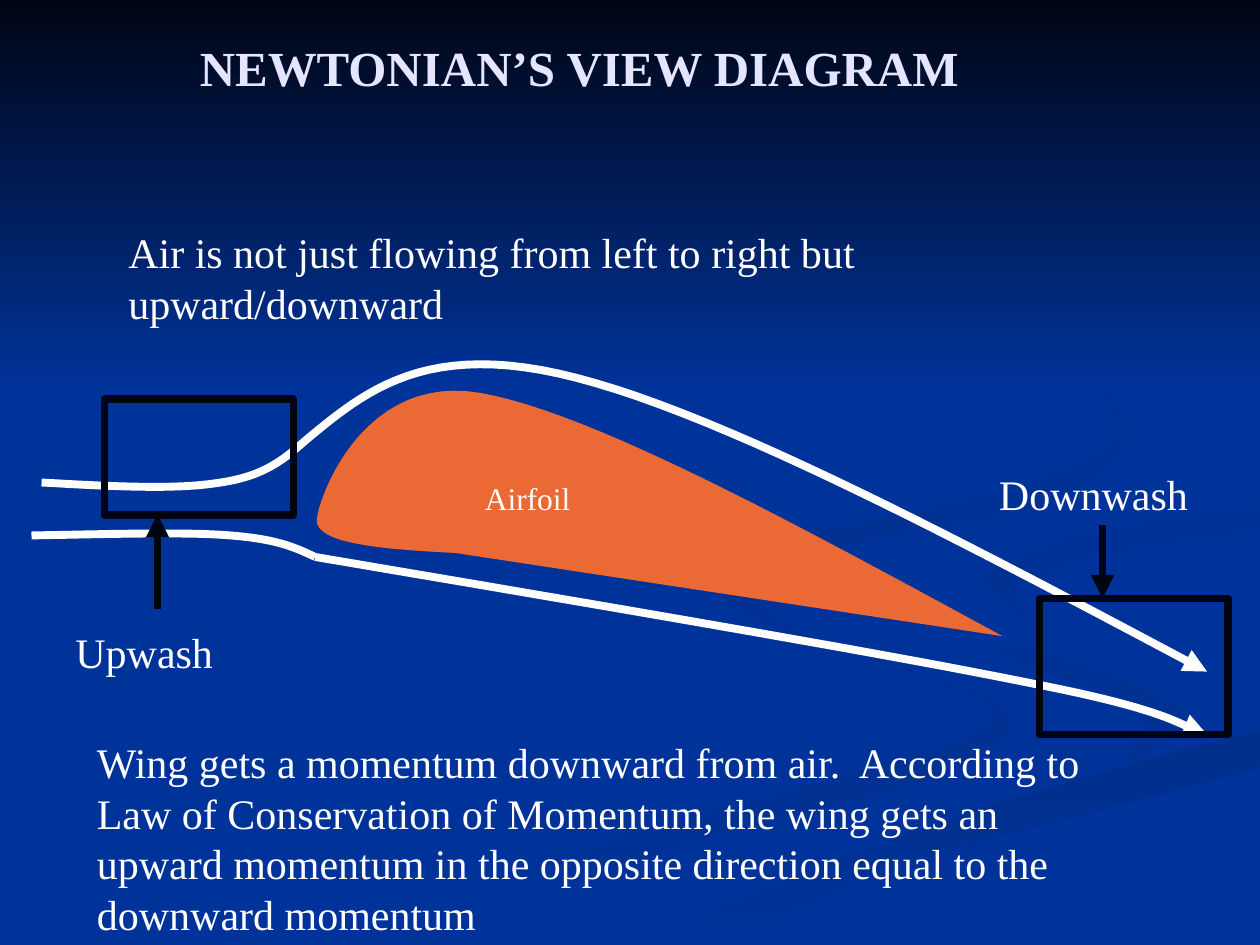
from dataclasses import dataclass
from math import cos, radians, sin
from typing import NamedTuple

from lxml.etree import SubElement
from pptx import Presentation
from pptx.dml.color import RGBColor
from pptx.enum.shapes import MSO_CONNECTOR, MSO_SHAPE
from pptx.enum.text import MSO_AUTO_SIZE, PP_ALIGN
from pptx.oxml.ns import qn
from pptx.util import Inches, Pt

Point = tuple[float, float]


@dataclass(frozen=True)
class Theme:
    font: str = "Times New Roman"
    background: str = "003399"
    dark: str = "000514"
    white: str = "FFFFFF"
    title: str = "E5E5FF"
    airfoil: str = "EB6935"
    title_size: int = 28
    body_size: int = 24
    label_size: int = 18
    line_width: float = 4.5


THEME = Theme()


class Swoosh(NamedTuple):
    start_color: str
    end_color: str
    angle: int  # clockwise degrees
    points: list[Point]


class Label(NamedTuple):
    text: str
    left: float
    top: float
    width: float
    height: float
    size: int = THEME.body_size
    color: str = THEME.white
    bold: bool = False
    align: PP_ALIGN = PP_ALIGN.LEFT
    left_margin: float = 0.1


class Stream(NamedTuple):
    controls: list[Point]  # start, then three points per cubic segment
    arrow: bool = False


# Each outline is smoothed through a few points
SWOOSHES = [
    Swoosh(THEME.background, "003193", 0, [
        (7.81, 5.53), (6.82, 5.19), (5.94, 4.85), (5.75, 4.59), (5.81, 4.84), (6.79, 5.19),
        (7.76, 5.53), (7.8, 5.79), (6.99, 6.09), (4.99, 6.61), (3, 7.49), (3.61, 7.49),
        (5.32, 6.74), (7.4, 6.18), (8, 5.81)]),
    Swoosh(THEME.background, "003193", 45, [
        (9.43, 5.7), (8.7, 5.3), (7.58, 4.98), (7.24, 4.64), (7.46, 5), (8.38, 5.36),
        (9.07, 5.62), (8.94, 6.05)]),
    Swoosh("002F8C", THEME.background, 90, [
        (5.03, 7.49), (5.71, 7.49), (7.22, 6.82), (9.98, 6.09), (9.98, 5.81), (7.64, 6.47)]),
    Swoosh("003091", THEME.background, 45, [
        (7.81, 4.6), (8.26, 4.96), (8.06, 4.68), (8.78, 4.39), (9.98, 4.2), (9.98, 4.02),
        (8.49, 4.27)]),
    Swoosh("002F8E", THEME.background, 45, [
        (6.83, 4.3), (8.25, 4.02), (8.92, 3.54), (8.64, 2.91), (7.62, 2.33), (8.62, 2.92),
        (8.82, 3.54), (7.63, 3.98), (6.05, 4.33), (5.8, 4.74), (6.22, 5), (5.96, 4.61)]),
]

AIRFOIL = [(7.96, 5.05), (6.34, 4.17), (4.72, 3.28), (3.82, 3.12), (2.91, 2.96), (2.55, 3.9),
           (2.52, 4.11), (2.48, 4.32), (3.05, 4.36), (3.62, 4.39)]
AIRFOIL_CENTER = (5.32, 4.05)
AIRFOIL_TILT = 8.7

STREAMS = [
    Stream([(2.5, 4.42), (4.74, 4.8), (6.99, 5.18), (8.17, 5.42),
            (9.35, 5.65), (9.35, 5.76), (9.58, 5.83)], arrow=True),
    Stream([(2.42, 3.5), (2.9, 3.1), (3.39, 2.69), (4.58, 3),
            (5.78, 3.31), (7.68, 4.32), (9.58, 5.33)], arrow=True),
    Stream([(0.33, 3.83), (0.87, 3.86), (1.4, 3.89), (1.75, 3.83),
            (2.1, 3.78), (2.26, 3.64), (2.42, 3.5)]),
    Stream([(2.5, 4.42), (2.35, 4.35), (2.21, 4.28), (1.83, 4.25),
            (1.46, 4.22), (0.85, 4.24), (0.25, 4.25)]),
]

WASH_BOXES = [(8.25, 4.75, 1.5, 1.08), (0.83, 3.17, 1.5, 0.92)]
WASH_ARROWS = [((1.25, 4.83), (1.25, 4.08)), ((8.75, 4.17), (8.75, 4.75))]

LABELS = [
    Label("NEWTONIAN’S VIEW DIAGRAM", 0.17, 0.25, 8.08, 0.57, THEME.title_size, THEME.title,
          True, PP_ALIGN.CENTER, 0.87),
    Label("Air is not just flowing from left to right but upward/downward", 0.92, 1.75, 8.5, 0.5),
    Label("Airfoil", 3.75, 3.75, 1.83, 0.4, THEME.label_size),
    Label("Downwash", 7.83, 3.67, 2.08, 0.5),
    Label("Upwash", 0.5, 4.92, 2.67, 0.5),
    Label("Wing gets a momentum downward from air.  According to Law of Conservation of "
          "Momentum, the wing gets an upward momentum in the opposite direction equal to the "
          "downward momentum", 0.67, 5.8, 8.42, 1.7),
]


def rgb(color: str) -> RGBColor:
    return RGBColor.from_string(color)


def curve(controls: list[Point], steps: int = 24) -> list[Point]:
    """Points along a chain of cubic Bézier segments."""
    points = [controls[0]]
    for first in range(0, len(controls) - 1, 3):
        segment = controls[first:first + 4]
        for step in range(1, steps + 1):
            t = step / steps
            weights = ((1 - t) ** 3, 3 * t * (1 - t) ** 2, 3 * t * t * (1 - t), t ** 3)
            points.append(tuple(sum(w * p[axis] for w, p in zip(weights, segment))
                                for axis in (0, 1)))
    return points


def smooth_loop(points: list[Point]) -> list[Point]:
    """Closed smooth outline whose tangents follow the neighbouring points."""
    def shifted(point: Point, before: Point, after: Point, sign: int) -> Point:
        return tuple(p + sign * (b - a) / 8 for p, a, b in zip(point, before, after))

    count = len(points)
    controls = [points[0]]
    for index, point in enumerate(points):
        before, after, beyond = (points[(index + step) % count] for step in (-1, 1, 2))
        controls += [shifted(point, before, after, 1), shifted(after, point, beyond, -1), after]
    return curve(controls, 8)


def rotate(point: Point, center: Point, degrees: float) -> Point:
    x, y = point[0] - center[0], point[1] - center[1]
    cosine, sine = cos(radians(degrees)), sin(radians(degrees))
    return center[0] + x * cosine - y * sine, center[1] + x * sine + y * cosine


def add_outline(shapes, points: list[Point], close: bool):
    start, *rest = [(Inches(x), Inches(y)) for x, y in points]
    builder = shapes.build_freeform(*start)
    builder.add_line_segments(rest, close=close)
    shape = builder.convert_to_shape()
    shape.shadow.inherit = False
    return shape


def fill_gradient(shape, start_color: str, end_color: str, angle: int) -> None:
    shape.fill.gradient()
    shape.fill.gradient_angle = (360 - angle) % 360
    for stop, color, position in zip(shape.fill.gradient_stops, (start_color, end_color), (0, 1)):
        stop.color.rgb = rgb(color)
        stop.position = position
    shape.line.fill.background()


def style_line(shape, color: str, arrow: bool = False) -> None:
    shape.line.color.rgb = rgb(color)
    shape.line.width = Pt(THEME.line_width)
    if arrow:
        SubElement(shape.element.spPr.find(qn("a:ln")), qn("a:tailEnd"), type="triangle")


def add_rectangle(shapes, *box: float):
    shape = shapes.add_shape(MSO_SHAPE.RECTANGLE, *map(Inches, box))
    shape.shadow.inherit = False
    return shape


def add_label(shapes, label: Label) -> None:
    box = shapes.add_textbox(*map(Inches, label[1:5]))
    frame = box.text_frame
    frame.word_wrap = True
    frame.auto_size = MSO_AUTO_SIZE.SHAPE_TO_FIT_TEXT
    frame.margin_left = Inches(label.left_margin)
    paragraph = frame.paragraphs[0]
    paragraph.text = label.text
    paragraph.alignment = label.align
    font = paragraph.font
    font.name, font.size, font.bold = THEME.font, Pt(label.size), label.bold
    font.color.rgb = rgb(label.color)


def main() -> None:
    presentation = Presentation()
    presentation.slide_width, presentation.slide_height = Inches(10), Inches(7.5)
    slide = presentation.slides.add_slide(presentation.slide_layouts[6])
    shapes = slide.shapes

    # Backdrop: swooshes below a band that fades from dark
    slide.background.fill.solid()
    slide.background.fill.fore_color.rgb = rgb(THEME.background)
    backdrop = shapes.add_group_shape().shapes
    for swoosh in SWOOSHES:
        fill_gradient(add_outline(backdrop, smooth_loop(swoosh.points), True), *swoosh[:3])
    fill_gradient(add_rectangle(backdrop, 0, 0, 10, 3.08), THEME.dark, THEME.background, 90)

    # Airfoil, outlined level and then tilted
    level = [rotate(point, AIRFOIL_CENTER, -AIRFOIL_TILT) for point in AIRFOIL]
    airfoil = add_outline(shapes, curve(level), True)
    airfoil.rotation = AIRFOIL_TILT
    airfoil.fill.solid()
    airfoil.fill.fore_color.rgb = rgb(THEME.airfoil)
    airfoil.line.fill.background()

    # Air streams
    for stream in STREAMS:
        shape = add_outline(shapes, curve(stream.controls), False)
        shape.fill.background()
        style_line(shape, THEME.white, stream.arrow)

    # Upwash and downwash markers
    for box in WASH_BOXES:
        shape = add_rectangle(shapes, *box)
        shape.fill.background()
        style_line(shape, THEME.dark)
    for start, end in WASH_ARROWS:
        arrow = shapes.add_connector(MSO_CONNECTOR.STRAIGHT, *map(Inches, start + end))
        style_line(arrow, THEME.dark, True)
        SubElement(arrow.element.spPr, qn("a:effectLst"))

    # Text
    for label in LABELS:
        add_label(shapes, label)

    presentation.save("out.pptx")


if __name__ == "__main__":
    main()
